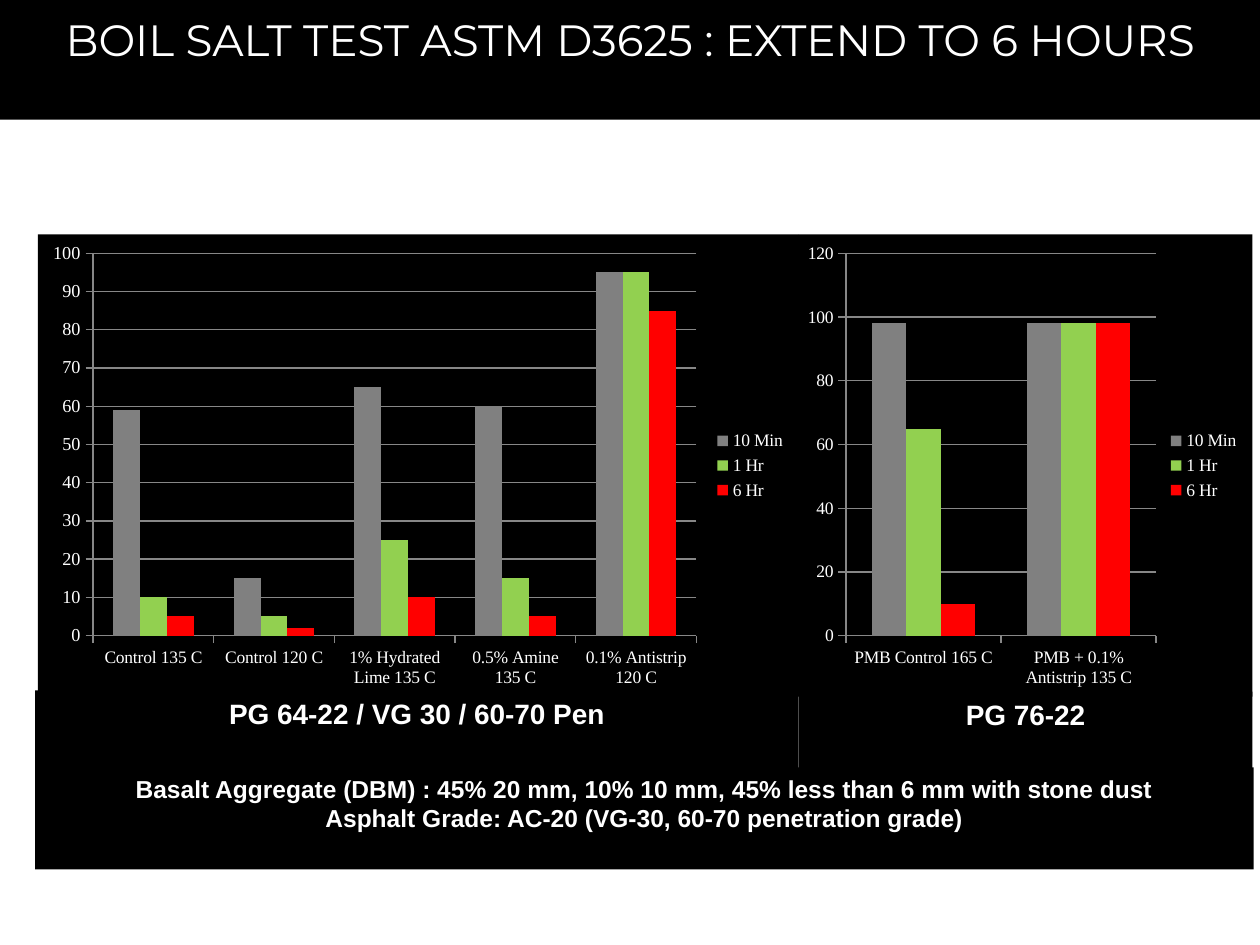
from pptx import Presentation
from pptx.chart.data import CategoryChartData
from pptx.dml.color import RGBColor
from pptx.enum.chart import XL_CHART_TYPE, XL_LEGEND_POSITION, XL_TICK_MARK
from pptx.enum.shapes import MSO_SHAPE
from pptx.enum.text import MSO_ANCHOR, PP_ALIGN
from pptx.oxml import parse_xml
from pptx.util import Inches, Pt

RECT = MSO_SHAPE.RECTANGLE
COLUMN = XL_CHART_TYPE.COLUMN_CLUSTERED
RIGHT = XL_LEGEND_POSITION.RIGHT
OUTSIDE = XL_TICK_MARK.OUTSIDE
CENTER = PP_ALIGN.CENTER
TOP = MSO_ANCHOR.TOP

COLORS = {"black": "000000", "white": "FFFFFF", "grid": "878787",
          "10 Min": "808080", "1 Hr": "92D050", "6 Hr": "FF0000"}
RGB = {name: RGBColor.from_string(code) for name, code in COLORS.items()}

AREA = (
    '<c:spPr xmlns:c="http://schemas.openxmlformats.org/drawingml/2006/chart"'
    ' xmlns:a="http://schemas.openxmlformats.org/drawingml/2006/main">'
    f'<a:solidFill><a:srgbClr val="{COLORS["black"]}"/></a:solidFill>'
    '<a:ln><a:noFill/></a:ln></c:spPr>')


def write(frame, lines, size, face, bold):
    frame.word_wrap = True
    frame.vertical_anchor = TOP
    frame.text = "\n".join(lines)
    for para in frame.paragraphs:
        para.alignment = CENTER
        font = para.runs[0].font
        font.size, font.name, font.bold = Pt(size), face, bold
        font.color.rgb = RGB["white"]


def add_box(box, lines=(), size=16):
    shape = slide.shapes.add_shape(RECT, *map(Inches, box))
    shape.shadow.inherit = False
    shape.fill.solid()
    shape.fill.fore_color.rgb = RGB["black"]
    shape.line.fill.background()
    if lines:
        write(shape.text_frame, lines, size, "Arial", True)


prs = Presentation()
prs.slide_width, prs.slide_height = Inches(10), Inches(7.5)
slide = prs.slides.add_slide(prs.slide_layouts[6])

# Title band
add_box((0, 0, 10, 0.95))
title = slide.shapes.add_textbox(Inches(0.06), Inches(0.05), Inches(9.88), Inches(1.48))
write(title.text_frame, ["BOIL SALT TEST ASTM D3625 : EXTEND TO 6 HOURS"],
      25, "Montserrat", False)

# Grade captions
add_box((0.28, 5.48, 6.06, 0.64), ["PG 64-22 / VG 30 / 60-70 Pen"])
add_box((6.34, 5.49, 3.6, 0.64), ["PG 76-22"])

# Charts: left, width, axis top, axis step, value text size, categories, series
charts = [
    (6.34, 3.6, 120, 20, 10,
     ["PMB Control 165 C", "PMB + 0.1% Antistrip 135 C"],
     {"10 Min": [98, 98], "1 Hr": [65, 98], "6 Hr": [10, 98]}),
    (0.3, 6.04, 100, 10, 10.4,
     ["Control 135 C", "Control 120 C", "1% Hydrated Lime 135 C",
      "0.5% Amine 135 C", "0.1% Antistrip 120 C"],
     {"10 Min": [59, 15, 65, 60, 95], "1 Hr": [10, 5, 25, 15, 95],
      "6 Hr": [5, 2, 10, 5, 85]}),
]
for left, width, top, step, size, cats, rows in charts:
    data = CategoryChartData()
    data.categories = cats
    for name, vals in rows.items():
        data.add_series(name, vals)
    chart = slide.shapes.add_chart(COLUMN, Inches(left), Inches(1.86),
                                   Inches(width), Inches(3.67), data).chart
    chart.has_title = False
    chart.font.size, chart.font.name = Pt(10), "Times New Roman"
    chart.font.color.rgb = RGB["white"]
    chart.element.find("{*}chart").addnext(parse_xml(AREA))

    chart.has_legend = True
    chart.legend.position = RIGHT
    chart.legend.include_in_layout = False

    plot = chart.plots[0]
    plot.gap_width, plot.overlap = 150, 0
    plot.vary_by_categories = False
    for series in plot.series:
        series.format.fill.solid()
        series.format.fill.fore_color.rgb = RGB[series.name]

    scale = chart.value_axis
    scale.minimum_scale, scale.maximum_scale = 0, top
    scale.major_unit = step
    scale.tick_labels.font.size = Pt(size)
    scale.has_major_gridlines = True
    for axis in (scale, chart.category_axis):
        axis.major_tick_mark = OUTSIDE
    for part in (scale, chart.category_axis, scale.major_gridlines):
        part.format.line.color.rgb = RGB["grid"]
        part.format.line.width = Pt(0.75)

# Mix notes
add_box((0.28, 6.09, 9.67, 0.81),
        ["Basalt Aggregate (DBM) : 45% 20 mm, 10% 10 mm, 45% less than 6 mm with stone dust",
         "Asphalt Grade: AC-20 (VG-30, 60-70 penetration grade)"], 14)

prs.save("out.pptx")
